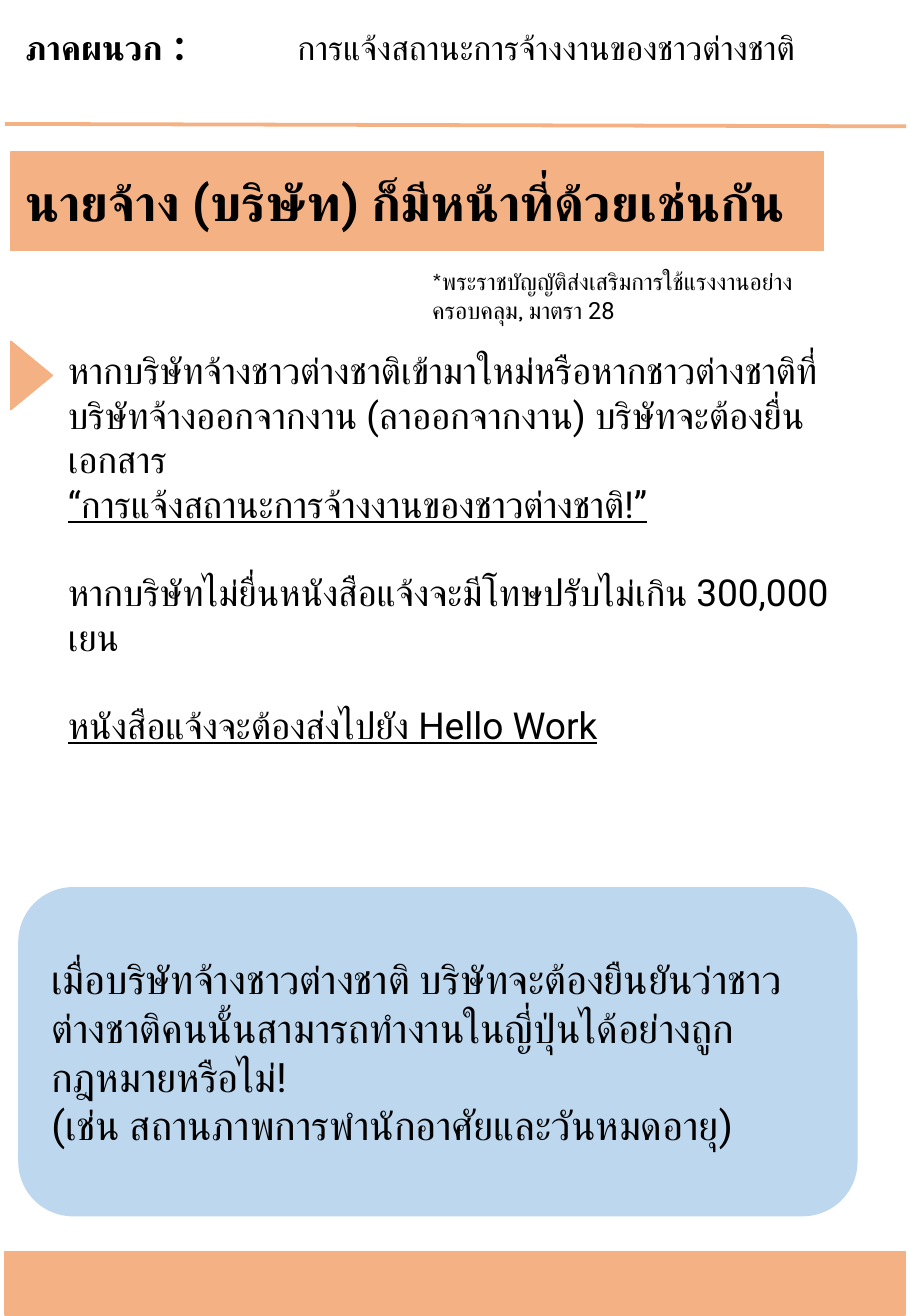
"""Builds a Thai appendix page on employers' duty to report foreign staff."""
from dataclasses import dataclass

from lxml import etree
from pptx import Presentation
from pptx import util as u
from pptx.dml.color import RGBColor
from pptx.enum import shapes, text
from pptx.oxml.ns import qn


@dataclass(frozen=True)
class Theme:
    orange: RGBColor = RGBColor(0xF4, 0xB1, 0x83)
    blue: RGBColor = RGBColor(0xBD, 0xD7, 0xEE)
    black: RGBColor = RGBColor(0, 0, 0)
    main: str = "Karla"
    alt: str = "Roboto"
    note: int = 14
    head: int = 20
    body: int = 22
    call: int = 24
    title: int = 30


THEME = Theme()
KIND = shapes.MSO_SHAPE


def set_face(font, name):
    font.name = name
    etree.SubElement(font._rPr, qn("a:cs"), typeface=name)


def add_run(para, words, face=None, bold=None, line=None):
    for i, part in enumerate(words.split("\n")):
        if i:
            para.add_line_break()
        if part:
            run = para.add_run()
            run.text = part
            if face:
                set_face(run.font, face)
            run.font.bold = bold
            run.font.underline = line


def write(frame, paras, size, bold=False, gap=0):
    frame.word_wrap = True
    for i, runs in enumerate(paras):
        para = frame.add_paragraph() if i else frame.paragraphs[0]
        para.alignment = text.PP_ALIGN.LEFT
        para.font.size = u.Pt(size)
        para.font.bold = bold
        para.font.color.rgb = THEME.black
        set_face(para.font, THEME.main)
        if i and gap:
            para.space_before = u.Pt(gap)
        for run in runs:
            add_run(para, **run)


def add_text(slide, box, paras, size, **style):
    frame = slide.shapes.add_textbox(*map(u.Inches, box)).text_frame
    write(frame, paras, size, **style)
    frame.auto_size = text.MSO_AUTO_SIZE.SHAPE_TO_FIT_TEXT
    return frame


def add_block(slide, kind, box, fill, edge=None):
    shape = slide.shapes.add_shape(kind, *map(u.Inches, box))
    shape.shadow.inherit = False
    shape.fill.solid()
    shape.fill.fore_color.rgb = fill
    if edge:
        shape.line.color.rgb = fill
        shape.line.width = u.Pt(edge)
    else:
        shape.line.fill.background()
    return shape


def add_rule(slide, ends):
    rule = slide.shapes.add_connector(
        shapes.MSO_CONNECTOR.STRAIGHT, *map(u.Inches, ends))
    rule.line.color.rgb = THEME.orange
    rule.line.width = u.Pt(2.25)
    etree.SubElement(rule._element.spPr, qn("a:effectLst"))


def add_tab(para, place):
    tabs = etree.Element(qn("a:tabLst"))
    etree.SubElement(tabs, qn("a:tab"), pos=str(u.Inches(place)), algn="l")
    props = para._p.get_or_add_pPr()
    props.find(qn("a:defRPr")).addprevious(tabs)


def add_call(slide):
    card = add_block(slide, KIND.ROUNDED_RECTANGLE, (0.15, 7.3, 6.91, 2.71), THEME.blue)
    frame = card.text_frame
    frame.vertical_anchor = text.MSO_ANCHOR.MIDDLE
    frame.margin_left = frame.margin_right = u.Inches(0.14)
    frame.margin_top = frame.margin_bottom = u.Inches(0.07)
    write(frame, [
        [dict(words="เมื่อบริษัทจ้างชาวต่างชาติ บริษัทจะต้องยืนยันว่าชาวต่างชาติคนนั้น"
                    "สามารถทำงานในญี่ปุ่นได้อย่างถูกกฎหมายหรือไม่"),
         dict(words="!", face=THEME.alt)],
        [dict(words="(", face=THEME.alt),
         dict(words="เช่น สถานภาพการพำนักอาศัยและวันหมดอายุ"),
         dict(words=")", face=THEME.alt)],
    ], THEME.call)


def add_body(slide):
    add_text(slide, (0.46, 2.81, 6.89, 2.69), [
        [dict(words="หากบริษัทจ้างชาวต่างชาติเข้ามาใหม่หรือหากชาวต่างชาติที่\nบริษัทจ้างออกจาก"),
         dict(words="งาน (ลาออกจากงาน) บริษัทจะต้องยื่นเอกสาร \n", face=THEME.alt),
         dict(words="“การแจ้งสถานะการจ้างงานของชาวต่างชาติ!”", face=THEME.alt, line=True)],
        [dict(words="หากบริษัทไม่ยื่นหนังสือแจ้งจะมีโทษปรับไม่เกิน "),
         dict(words="300,000", face=THEME.alt),
         dict(words=" เยน")],
        [dict(words="หนังสือแจ้งจะต้องส่งไปยัง Hello Work", face=THEME.alt, line=True)],
    ], THEME.body, gap=26)


def main():
    deck = Presentation()
    deck.slide_width, deck.slide_height = u.Inches(7.5), u.Inches(10.83)
    slide = deck.slides.add_slide(deck.slide_layouts[6])
    add_rule(slide, (0.04, 1.02, 7.46, 1.04))
    add_block(slide, KIND.RECTANGLE, (0.04, 10.3, 7.41, 0.52), THEME.orange, 1)
    add_body(slide)
    add_block(slide, KIND.RECTANGLE, (0.09, 1.25, 6.69, 0.81), THEME.orange, 0.75)
    add_text(slide, (0.11, 1.36, 9.79, 0.61), [
        [dict(words="นายจ้าง "),
         dict(words="(บริษัท) ก็มีหน้าที่ด้วยเช่นกัน", face=THEME.alt)],
    ], THEME.title, bold=True)
    add_call(slide)
    mark = add_block(slide, KIND.ISOSCELES_TRIANGLE, (-0.02, 2.92, 0.56, 0.34), THEME.orange, 1)
    mark.rotation = 90
    head = add_text(slide, (0.11, 0.17, 7.34, 0.77), [
        [dict(words="ภาคผนวก ：", bold=True),
         dict(words="\tการแจ้งสถานะการจ้างงานของชาวต่างชาติ")],
    ], THEME.head)
    add_tab(head.paragraphs[0], 2.24)
    add_text(slide, (3.46, 2.15, 3.83, 0.34), [
        [dict(words="*พระราชบัญญัติส่งเสริมการใช้แรงงานอย่างครอบคลุม, มาตรา "),
         dict(words="28", face=THEME.alt)],
    ], THEME.note)
    deck.save("out.pptx")


if __name__ == "__main__":
    main()
